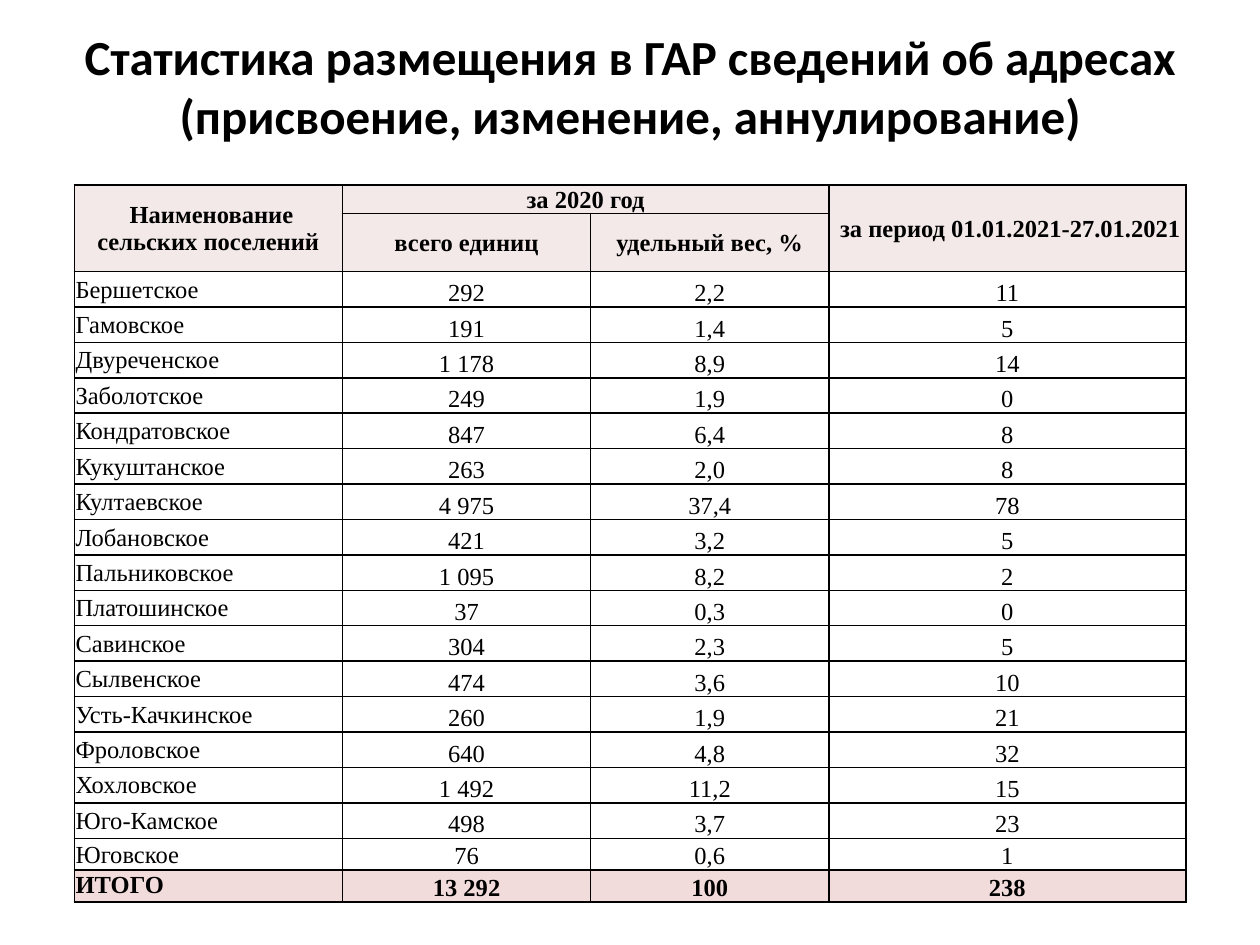
from lxml import etree
from pptx import Presentation
from pptx.dml.color import RGBColor
from pptx.enum import text as t
from pptx.oxml.ns import qn
from pptx.util import Pt

HUES = {"ink": "000000", "head": "F4E9E9", "body": "FFFFFF", "sum": "F2DCDB"}
MID, LOW, TOP = t.MSO_ANCHOR.MIDDLE, t.MSO_ANCHOR.BOTTOM, t.MSO_ANCHOR.TOP
LEFT, MITTE = t.PP_ALIGN.LEFT, t.PP_ALIGN.CENTER

TITLE = "Статистика размещения в ГАР сведений об адресах (присвоение, изменение, аннулирование)"
# Header cells: row, column, last row, last column, words
HEAD = [
    (0, 0, 1, 0, " Наименование сельских поселений"),
    (0, 1, 0, 2, "за 2020 год"),
    (0, 3, 1, 3, " за период 01.01.2021-27.01.2021"),
    (1, 1, 1, 1, "всего единиц"),
    (1, 2, 1, 2, "удельный вес, %"),
]
BODY = [
    ("Бершетское", "292", "2,2", "11"),
    ("Гамовское", "191", "1,4", "5"),
    ("Двуреченское", "1 178", "8,9", "14"),
    ("Заболотское", "249", "1,9", "0"),
    ("Кондратовское", "847", "6,4", "8"),
    ("Кукуштанское", "263", "2,0", "8"),
    ("Култаевское", "4 975", "37,4", "78"),
    ("Лобановское", "421", "3,2", "5"),
    ("Пальниковское", "1 095", "8,2", "2"),
    ("Платошинское", "37", "0,3", "0"),
    ("Савинское", "304", "2,3", "5"),
    ("Сылвенское", "474", "3,6", "10"),
    ("Усть-Качкинское", "260", "1,9", "21"),
    ("Фроловское", "640", "4,8", "32"),
    ("Хохловское", "1 492", "11,2", "15"),
    ("Юго-Камское", "498", "3,7", "23"),
    ("Юговское", "76", "0,6", "1"),
]
TOTAL = ("ИТОГО", "13 292", "100", "238")
COLS = [153.2, 141.9, 136.1, 204]
ROWS = [12.3, 33.2] + [20.25] * (len(BODY) - 1) + [18.2] * 2


def write(frame, words, font="Times New Roman", size=14, bold=False, align=MITTE, hue="ink"):
    para = frame.paragraphs[0]
    para.alignment = align
    run = para.add_run()
    run.text = words
    run.font.name, run.font.size, run.font.bold = font, Pt(size), bold
    run.font.color.rgb = RGBColor.from_string(HUES[hue])


class Deck:
    def __init__(self, wide, high):
        self.show = Presentation()
        self.show.slide_width, self.show.slide_height = Pt(wide), Pt(high)
        self.slide = self.show.slides.add_slide(self.show.slide_layouts[5])

    def title(self, words, x, y, w, h):
        box = self.slide.shapes.title
        box.left, box.top, box.width, box.height = map(Pt, (x, y, w, h))
        frame = box.text_frame
        frame.word_wrap, frame.auto_size = True, t.MSO_AUTO_SIZE.NONE
        frame.vertical_anchor = MID
        write(frame, words, font="Calibri", size=28, bold=True)

    def grid(self, x, y, cols, rows):
        spot = map(Pt, (x, y, sum(cols), sum(rows)))
        table = self.slide.shapes.add_table(len(rows), len(cols), *spot).table
        table.first_row = table.horz_banding = False
        for col, wide in zip(table.columns, cols):
            col.width = Pt(wide)
        for row, high in zip(table.rows, rows):
            row.height = Pt(high)
        for cell in table.iter_cells():
            self.edge(cell)
        return table

    def edge(self, cell):
        cell.margin_left = cell.margin_right = cell.margin_top = Pt(0.7)
        cell.margin_bottom = 0
        props = cell._tc.get_or_add_tcPr()
        for side in ("lnL", "lnR", "lnT", "lnB"):
            line = etree.SubElement(props, qn("a:" + side), w=str(Pt(1)))
            fill = etree.SubElement(line, qn("a:solidFill"))
            etree.SubElement(fill, qn("a:srgbClr"), val=HUES["ink"])

    def cell(self, cell, words, fill, anchor=MID, **form):
        cell.fill.solid()
        cell.fill.fore_color.rgb = RGBColor.from_string(HUES[fill])
        cell.vertical_anchor = anchor
        write(cell.text_frame, words, **form)

    def row(self, table, num, words, fill="body", first=MID, bold=False):
        for col, word in enumerate(words):
            anchor, align = (LOW, MITTE) if col else (first, LEFT)
            self.cell(table.cell(num, col), word, fill, anchor, bold=bold, align=align)


def main():
    deck = Deck(720, 540)
    deck.title(TITLE, 0, 21, 720, 55.5)

    # Table header
    table = deck.grid(42.5, 105.8, COLS, ROWS)
    for top, left, low, right, words in HEAD:
        cell = table.cell(top, left)
        if (top, left) != (low, right):
            cell.merge(table.cell(low, right))
        deck.cell(cell, words, "head", bold=True)

    # Settlements and total
    for num, words in enumerate(BODY, 2):
        deck.row(table, num, words)
    deck.row(table, len(ROWS) - 1, TOTAL, fill="sum", first=TOP, bold=True)

    deck.show.save("out.pptx")


if __name__ == "__main__":
    main()
